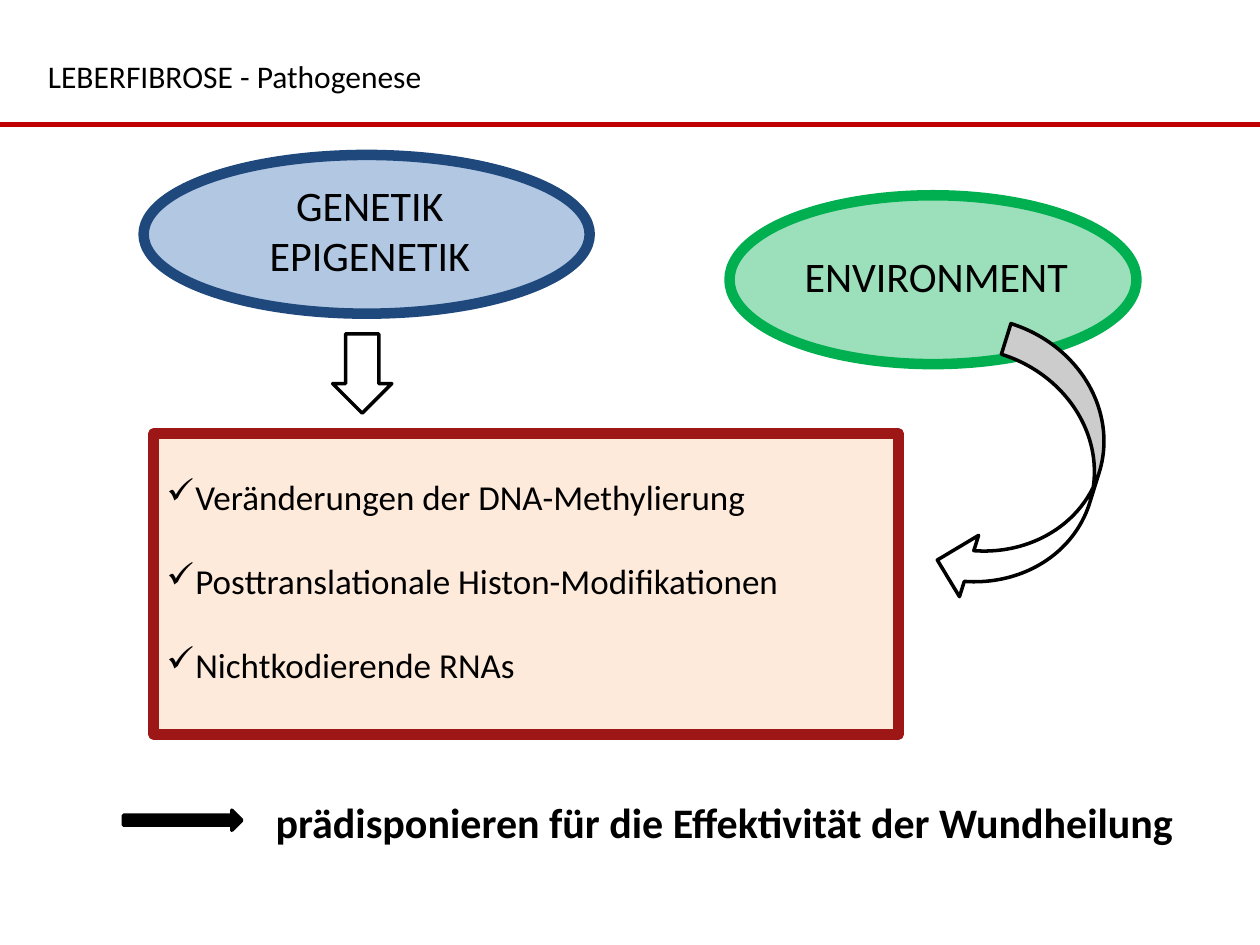
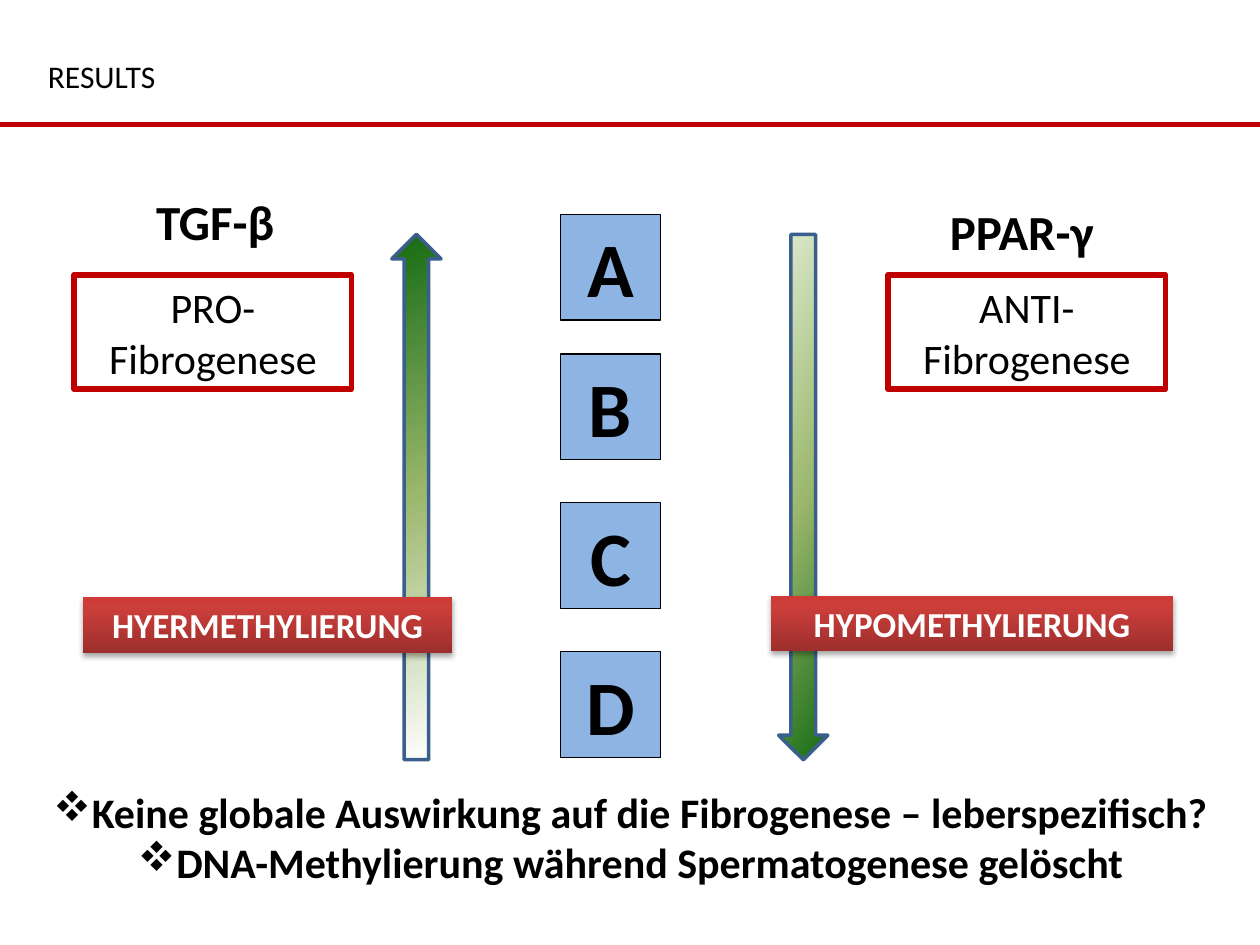
from dataclasses import dataclass
from lxml.etree import SubElement
from pptx import Presentation
from pptx.dml.color import RGBColor
from pptx.enum.shapes import MSO_CONNECTOR, MSO_SHAPE
from pptx.enum.text import MSO_ANCHOR, MSO_AUTO_SIZE, PP_ALIGN
from pptx.oxml.ns import qn
from pptx.util import Inches, Pt


@dataclass(frozen=True)
class Theme:
    font: str = "Calibri"
    bullet_font: str = "Wingdings"
    check: str = "ü"
    diamonds: str = "v"
    black: str = "000000"
    white: str = "FFFFFF"
    rule: str = "C00000"
    box_fill: str = "FDEADA"
    box_line: str = "9D1717"
    blue: str = "4F81BD"
    navy: str = "1F497D"
    green: str = "00B050"
    tile: str = "8EB4E3"
    arrow_line: str = "3A5F8C"
    rising: tuple = ((0, "FFFFFF"), (50, "9CB86E"), (100, "156B13"))
    falling: tuple = ((0, "DDEBCF"), (50, "9CB86E"), (100, "156B13"))
    banner: tuple = ((0, "9C2F2D"), (80, "CB3E3A"), (100, "CE3B37"))
    title: int = 18
    item: int = 20
    label: int = 24
    gene: int = 28
    letter: int = 44


T = Theme()


def rgb(color):
    return RGBColor.from_string(color)


def place(sp, box):
    sp.left, sp.top, sp.width, sp.height = map(Inches, box)


def paint(sp, fill=None, line=None, width=1, alpha=None):
    if fill:
        sp.fill.solid()
        sp.fill.fore_color.rgb = rgb(fill)
        if alpha:
            clr = sp.fill._xPr.find(qn("a:solidFill"))[0]
            SubElement(clr, qn("a:alpha"), val=str(alpha * 1000))
    else:
        sp.fill.background()
    if line:
        sp.line.color.rgb = rgb(line)
        sp.line.width = Pt(width)
        SubElement(sp.line._get_or_add_ln(), qn("a:round"))
    else:
        sp.line.fill.background()


def paint_gradient(sp, stops, angle):
    sp.fill.gradient()
    sp.fill.gradient_angle = angle
    gs_lst = sp.fill._xPr.find(qn("a:gradFill")).find(qn("a:gsLst"))
    for gs in list(gs_lst):
        gs_lst.remove(gs)
    for pos, color in stops:
        gs = SubElement(gs_lst, qn("a:gs"), pos=str(pos * 1000))
        SubElement(gs, qn("a:srgbClr"), val=color)


def add_soft_shadow(sp):
    effects = sp._element.spPr.find(qn("a:effectLst"))
    shadow = SubElement(effects, qn("a:outerShdw"), blurRad=str(Pt(3.1)),
                        dist=str(Pt(1.8)), dir="5400000", rotWithShape="0")
    clr = SubElement(shadow, qn("a:srgbClr"), val=T.black)
    SubElement(clr, qn("a:alpha"), val="35000")


def write(p, text, size, bold=False, color=T.black, align=PP_ALIGN.LEFT):
    p.alignment = align
    r = p.add_run()
    r.text = text
    r.font.name = T.font
    r.font.size = Pt(size)
    r.font.bold = bold
    r.font.color.rgb = rgb(color)


def add_preset(s, kind, box):
    sp = s.shapes.add_shape(kind, *map(Inches, box))
    sp.shadow.inherit = False
    return sp


def add_label(s, box, text, size, bold=False, align=PP_ALIGN.LEFT):
    tf = s.shapes.add_textbox(*map(Inches, box)).text_frame
    tf.word_wrap = True
    write(tf.paragraphs[0], text, size, bold, align=align)


def add_text_box(s, box, text, size, bold=False, color=T.black):
    sp = add_preset(s, MSO_SHAPE.RECTANGLE, box)
    write(sp.text_frame.paragraphs[0], text, size, bold, color, PP_ALIGN.CENTER)
    return sp


def fill_list(sp, box, items, bullet, size, gap=0, bold=False,
              align=PP_ALIGN.LEFT, anchor=MSO_ANCHOR.TOP):
    place(sp, box)
    tf = sp.text_frame
    tf.auto_size = MSO_AUTO_SIZE.NONE
    tf.vertical_anchor = anchor
    tf.margin_bottom = Inches(0.1)
    for i, item in enumerate(items):
        p = tf.paragraphs[0] if i == 0 else tf.add_paragraph()
        p.space_before = Pt(gap if i else 0)
        pPr = p._p.get_or_add_pPr()
        pPr.set("marL", "0")
        pPr.set("indent", "0")
        SubElement(pPr, qn("a:buFont"), typeface=T.bullet_font,
                   pitchFamily="2", charset="2")
        SubElement(pPr, qn("a:buChar"), char=bullet)
        write(p, item, size, bold, align=align)


def new_slide(prs, title):
    s = prs.slides.add_slide(prs.slide_layouts[1])
    sp = s.shapes.title
    place(sp, (0.28, 0.36, 9, 0.48))
    sp.text_frame.auto_size = MSO_AUTO_SIZE.NONE
    sp.text_frame.vertical_anchor = MSO_ANCHOR.MIDDLE
    write(sp.text_frame.paragraphs[0], title, T.title)
    rule = s.shapes.add_connector(MSO_CONNECTOR.STRAIGHT, 0, Inches(0.99),
                                  prs.slide_width, Inches(0.99))
    rule.line.color.rgb = rgb(T.rule)
    rule.line.width = Pt(3)
    SubElement(rule._element.spPr, qn("a:effectLst"))
    return s


def add_factor(s, box, text, fill, line, alpha, label_height):
    x, y, w, h = box
    paint(add_preset(s, MSO_SHAPE.OVAL, box), fill, line, 6, alpha)
    label_top = y + (h - label_height) / 2 - 0.03
    add_label(s, (x + 0.4, label_top, w - 0.75, label_height),
              text, T.label, align=PP_ALIGN.CENTER)


def add_block_arrow(s, kind, box, fill=T.white):
    sp = add_preset(s, kind, box)
    paint(sp, fill, T.black, 2)
    return sp


def build_pathogenesis(prs):
    s = new_slide(prs, "LEBERFIBROSE - Pathogenese")
    body = s.placeholders[1]
    fill_list(body, (1.22, 3.44, 5.91, 2.39),
              ("Veränderungen der DNA-Methylierung",
               "Posttranslationale Histon-Modifikationen",
               "Nichtkodierende RNAs"),
              T.check, T.item, gap=24, anchor=MSO_ANCHOR.MIDDLE)
    paint(body, T.box_fill, T.box_line, 6)
    add_factor(s, (1.14, 1.23, 3.54, 1.26), "GENETIK EPIGENETIK",
               T.blue, T.navy, 44, 0.91)
    add_factor(s, (5.79, 1.55, 3.23, 1.34), "ENVIRONMENT",
               T.green, T.green, 39, 0.5)
    add_label(s, (2.09, 6.27, 7.64, 0.81),
              "prädisponieren für die Effektivität der Wundheilung", T.label, True)
    curve = add_block_arrow(s, MSO_SHAPE.CURVED_LEFT_ARROW, (7.67, 2.67, 1.02, 2.22))
    curve.rotation = 17.3
    down = add_block_arrow(s, MSO_SHAPE.DOWN_ARROW, (2.64, 2.65, 0.47, 0.63))
    down.adjustments[0] = 0.56
    add_block_arrow(s, MSO_SHAPE.RIGHT_ARROW, (0.98, 6.43, 0.94, 0.16), T.black)


def add_trend_arrow(s, x, stops, angle, rotation=0):
    sp = add_preset(s, MSO_SHAPE.UP_ARROW, (x, 1.86, 0.39, 4.17))
    paint(sp, line=T.arrow_line, width=2)
    paint_gradient(sp, stops, angle)
    sp.rotation = rotation


def add_gene(s, name_at, name, box_x, role):
    add_label(s, (*name_at, 1.54, 0.57), name, T.gene, True)
    paint(add_text_box(s, (box_x, 2.18, 2.2, 0.91), role, T.label),
          line=T.rule, width=3.25)


def add_banner(s, box, text):
    sp = add_text_box(s, box, text, T.item, True, T.white)
    paint(sp)
    paint_gradient(sp, T.banner, 90)
    add_soft_shadow(sp)


def build_results(prs):
    s = new_slide(prs, "RESULTS")
    for letter, y in zip("ABCD", (1.7, 2.81, 3.99, 5.17)):
        paint(add_text_box(s, (4.45, y, 0.79, 0.84), letter, T.letter, True),
              T.tile, T.black, 0.75)
    add_trend_arrow(s, 3.11, T.rising, 110)
    add_trend_arrow(s, 6.18, T.falling, 150, 180)
    add_gene(s, (1.14, 1.47), "TGF-β", 0.59, "PRO-Fibrogenese")
    add_gene(s, (7.44, 1.55), "PPAR-γ", 7.05, "ANTI-Fibrogenese")
    fill_list(s.placeholders[1], (0.28, 6.19, 9.45, 0.91),
              ("Keine globale Auswirkung auf die Fibrogenese – leberspezifisch?",
               "DNA-Methylierung während Spermatogenese gelöscht"),
              T.diamonds, T.label, bold=True, align=PP_ALIGN.CENTER)
    add_banner(s, (6.12, 4.73, 3.19, 0.44), "HYPOMETHYLIERUNG")
    add_banner(s, (0.66, 4.74, 2.93, 0.44), "HYERMETHYLIERUNG")


def main():
    prs = Presentation()
    prs.slide_width, prs.slide_height = Inches(10), Inches(7.5)
    build_pathogenesis(prs)
    build_results(prs)
    prs.save("out.pptx")


if __name__ == "__main__":
    main()
